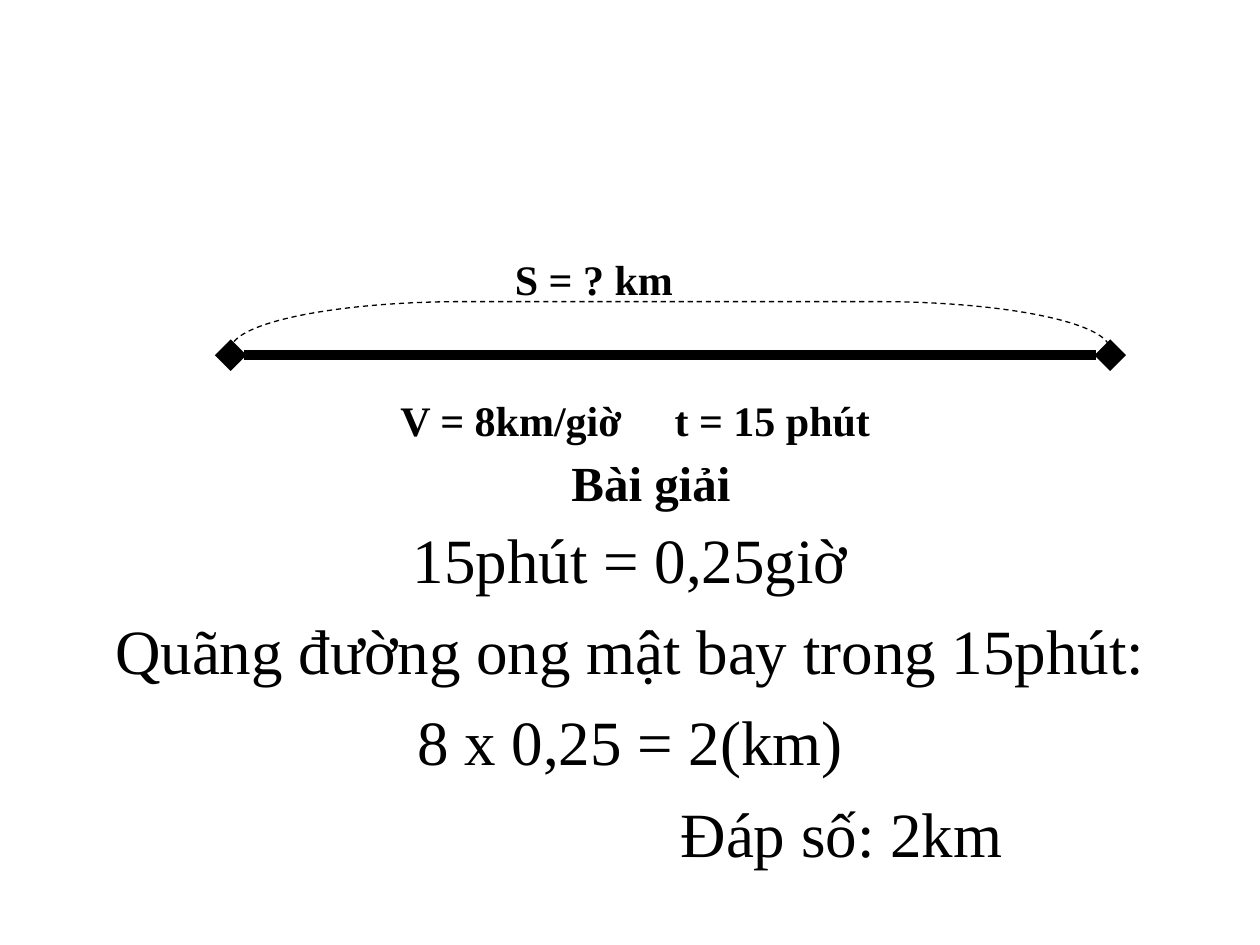
from lxml.etree import SubElement
from pptx import Presentation
from pptx.dml.color import RGBColor
from pptx.enum.dml import MSO_LINE
from pptx.enum.shapes import MSO_CONNECTOR, MSO_SHAPE
from pptx.enum.text import PP_ALIGN
from pptx.oxml.ns import qn
from pptx.util import Cm, Pt

# Content: (text, left, top, width, height, type size, indent, tab stop) in cm
LABELS = [
    ("V = 8km/giờ\tt = 15 phút", 7.82, 7.82, 12.27, 1.27, "label", 0, 5.53),
    ("S = ? km", 10.13, 4.98, 6.27, 1.27, "label", 0, None),
    ("Bài giải", 6.35, 8.99, 12.7, 1.45, "heading", 4.92, None),
]
SOLUTION = [
    "15phút = 0,25giờ",
    "Quãng đường ong mật bay trong 15phút:",
    "8 x 0,25 = 2(km)",
]
ANSWER = "Đáp số: 2km"
ANSWER_INDENT = 13.47
ROUTE = {"left": 4.65, "right": 22.38, "y": 7.16}
ARC = {"top": 6.08, "height": 0.97, "curve": 4.83}

THEME = {
    "font": "Times New Roman",
    "ink": RGBColor(0, 0, 0),
    "label": Pt(24),
    "heading": Pt(28),
    "body": Pt(36),
    "gap": Pt(9),
    "route": Pt(6),
    "arc": Pt(0.75),
}


def add_box(page, left, top, width, height):
    box = page.shapes.add_textbox(Cm(left), Cm(top), Cm(width), Cm(height))
    box.text_frame.word_wrap = True
    return box.text_frame


def write(para, text, size, bold=False, align=PP_ALIGN.LEFT, indent=0):
    para.text = text
    para.alignment = align
    para.font.name = THEME["font"]
    para.font.size = THEME[size]
    para.font.bold = bold
    para.font.color.rgb = THEME["ink"]
    if indent:
        para._p.get_or_add_pPr().set("marL", str(Cm(indent)))


def add_tab_stop(para, position):
    properties = para._p.get_or_add_pPr()
    stops = properties.makeelement(qn("a:tabLst"), {})
    SubElement(stops, qn("a:tab"), pos=str(Cm(position)), algn="l")
    properties.find(qn("a:defRPr")).addprevious(stops)


def add_route(page):
    y = Cm(ROUTE["y"])
    route = page.shapes.add_connector(
        MSO_CONNECTOR.STRAIGHT, Cm(ROUTE["left"]), y, Cm(ROUTE["right"]), y)
    route.line.color.rgb = THEME["ink"]
    route.line.width = THEME["route"]
    for end in ("a:headEnd", "a:tailEnd"):
        SubElement(route.line._get_or_add_ln(), qn(end), type="diamond")
    SubElement(route._element.spPr, qn("a:effectLst"))


def add_arc(page):
    # A right bracket turned on its side, centred above the route
    length = ROUTE["right"] - ROUTE["left"]
    centre_x = (ROUTE["left"] + ROUTE["right"]) / 2
    centre_y = ARC["top"] + ARC["height"] / 2
    arc = page.shapes.add_shape(
        MSO_SHAPE.RIGHT_BRACKET,
        Cm(centre_x - ARC["height"] / 2), Cm(centre_y - length / 2),
        Cm(ARC["height"]), Cm(length))
    arc.rotation = 270
    arc.adjustments[0] = ARC["curve"]
    arc.shadow.inherit = False
    arc.fill.background()
    arc.line.color.rgb = THEME["ink"]
    arc.line.width = THEME["arc"]
    arc.line.dash_style = MSO_LINE.DASH


def main():
    deck = Presentation()
    deck.slide_width, deck.slide_height = Cm(25.4), Cm(19.05)
    page = deck.slides.add_slide(deck.slide_layouts[6])

    # Worked solution
    frame = add_box(page, 0, 10.36, 25.4, 8.69)
    for number, text in enumerate(SOLUTION):
        para = frame.add_paragraph() if number else frame.paragraphs[0]
        write(para, text, "body", align=PP_ALIGN.CENTER)
        para.space_before = THEME["gap"]
    para = frame.add_paragraph()
    write(para, ANSWER, "body", indent=ANSWER_INDENT)
    para.space_before = THEME["gap"]

    # Distance diagram
    add_route(page)
    add_arc(page)

    # Labels and heading
    for text, left, top, width, height, size, indent, tab in LABELS:
        para = add_box(page, left, top, width, height).paragraphs[0]
        write(para, text, size, bold=True, indent=indent)
        if tab:
            add_tab_stop(para, tab)

    deck.save("out.pptx")


if __name__ == "__main__":
    main()
